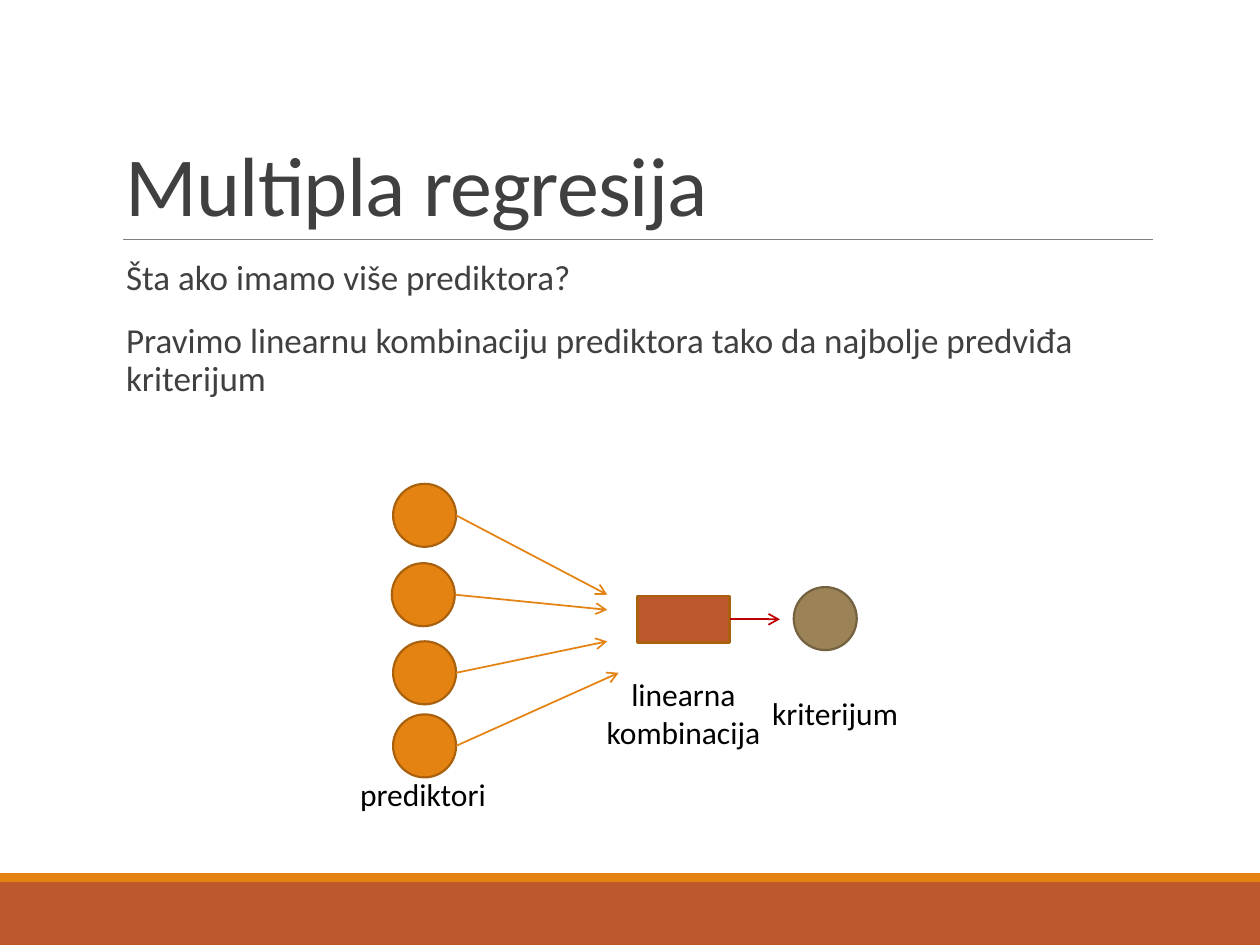
from pptx import Presentation
from pptx.dml.color import RGBColor
from pptx.enum.shapes import MSO_CONNECTOR, MSO_SHAPE
from pptx.enum.text import MSO_ANCHOR, PP_ALIGN
from pptx.oxml.ns import qn
from pptx.util import Inches, Pt
from lxml import etree

RECT, OVAL, STRAIGHT = MSO_SHAPE.RECTANGLE, MSO_SHAPE.OVAL, MSO_CONNECTOR.STRAIGHT
TOP, BOTTOM = MSO_ANCHOR.TOP, MSO_ANCHOR.BOTTOM
LEFT, CENTER = PP_ALIGN.LEFT, PP_ALIGN.CENTER
RIGHT_SIDE = 3

THEME = {
    "font": "Calibri", "title": 48, "body": 20, "label": 18,
    "orange": "E48312", "orange_edge": "A9610D", "rust": "BD582C",
    "tan": "9B8357", "tan_edge": "736140", "red": "C00000",
    "ink": "404040", "black": "000000", "rule": "808080",
}
W, H = 10, 7.5
MARGIN, CONTENT_W = 0.9, 8.25
DOT = 0.5

TITLE = ["Multipla regresija"]
BODY = ["Šta ako imamo više prediktora?",
        "Pravimo linearnu kombinaciju prediktora tako da najbolje predviđa kriterijum"]
BANDS = [(7, 0.5, "rust"), (6.93, 0.07, "orange")]  # top, height, fill
# left and top of each predictor, then the tip of its arrow
PREDICTORS = [((3.12, 3.84), (4.82, 4.72)), ((3.11, 4.47), (4.82, 4.84)),
              ((3.12, 5.09), (4.82, 5.09)), ((3.12, 5.67), (4.91, 5.34))]
COMBINATION = (5.06, 4.73, 0.73, 0.37)
CRITERION = (6.3, 4.66, DOT, DOT)
LABELS = [((2.76, 6.1, 1.21, 0.4), ["prediktori"], LEFT),
          ((6.03, 5.46, 1.21, 0.4), ["kriterijum"], LEFT),
          ((4.71, 5.31, 1.43, 0.71), ["linearna", "kombinacija"], CENTER)]


def color(name):
    return RGBColor.from_string(THEME[name])


def inches(values):
    return [Inches(v) for v in values]


def add_block(s, kind, box, fill, edge=None):
    sp = s.shapes.add_shape(kind, *inches(box))
    sp.shadow.inherit = False
    sp.fill.solid()
    sp.fill.fore_color.rgb = color(fill)
    if edge:
        sp.line.color.rgb = color(edge)
        sp.line.width = Pt(1.25)
    else:
        sp.line.fill.background()
    return sp


def add_line(s, start, end, stroke, width=1, arrow=True):
    line = s.shapes.add_connector(STRAIGHT, *inches(start + end))
    line.line.color.rgb = color(stroke)
    line.line.width = Pt(width)
    if arrow:
        etree.SubElement(line.line._get_or_add_ln(), qn("a:tailEnd"), type="arrow")
    etree.SubElement(line._element.spPr, qn("a:effectLst"))
    return line


def add_text(s, box, lines, size, ink, frame=None, para=None, indent=0, tracking=0):
    """Add one paragraph per line; frame and para hold attributes to set."""
    tf = s.shapes.add_textbox(*inches(box)).text_frame
    for key, value in (frame or {}).items():
        setattr(tf, key, value)
    for i, text in enumerate(lines):
        p = tf.add_paragraph() if i else tf.paragraphs[0]
        for key, value in (para or {}).items():
            setattr(p, key, value)
        if indent:
            p._p.get_or_add_pPr().set("marL", str(Inches(indent)))
        r = p.add_run()
        r.text = text
        r.font.name, r.font.size = THEME["font"], Pt(THEME[size])
        r.font.color.rgb = color(ink)
        if tracking:
            r._r.get_or_add_rPr().set("spc", str(round(tracking * 100)))


def add_diagram(s):
    for (left, top), tip in PREDICTORS:
        add_block(s, OVAL, (left, top, DOT, DOT), "orange", "orange_edge")
        add_line(s, (left + DOT, top + DOT / 2), tip, "orange")
    add_block(s, OVAL, CRITERION, "tan", "tan_edge")
    box = add_block(s, RECT, COMBINATION, "rust", "orange_edge")
    x, y, w, h = COMBINATION
    middle = y + h / 2
    arrow = add_line(s, (x + w, middle), (x + w + 0.4, middle), "red")
    arrow.begin_connect(box, RIGHT_SIDE)
    for place, lines, align in LABELS:
        add_text(s, place, lines, "label", "black",
                 {"word_wrap": False}, {"alignment": align})


def main():
    prs = Presentation()
    prs.slide_width, prs.slide_height = inches((W, H))
    s = prs.slides.add_slide(prs.slide_layouts[6])
    for top, height, fill in BANDS:
        add_block(s, RECT, (0, top, W, height), fill)
    add_line(s, (0.98, 1.9), (MARGIN + CONTENT_W, 1.9), "rule", 0.5, arrow=False)
    add_text(s, (MARGIN, 0.31, CONTENT_W, 1.59), TITLE, "title", "ink",
             {"word_wrap": True, "vertical_anchor": BOTTOM},
             {"line_spacing": 0.85}, tracking=-0.5)
    add_text(s, (MARGIN, 2.02, CONTENT_W, 4.4), BODY, "body", "ink",
             {"word_wrap": True, "vertical_anchor": TOP,
              "margin_left": 0, "margin_right": 0},
             {"line_spacing": 0.9, "space_before": Pt(12), "space_after": Pt(2)},
             indent=0.1)
    add_diagram(s)
    prs.save("out.pptx")


if __name__ == "__main__":
    main()
